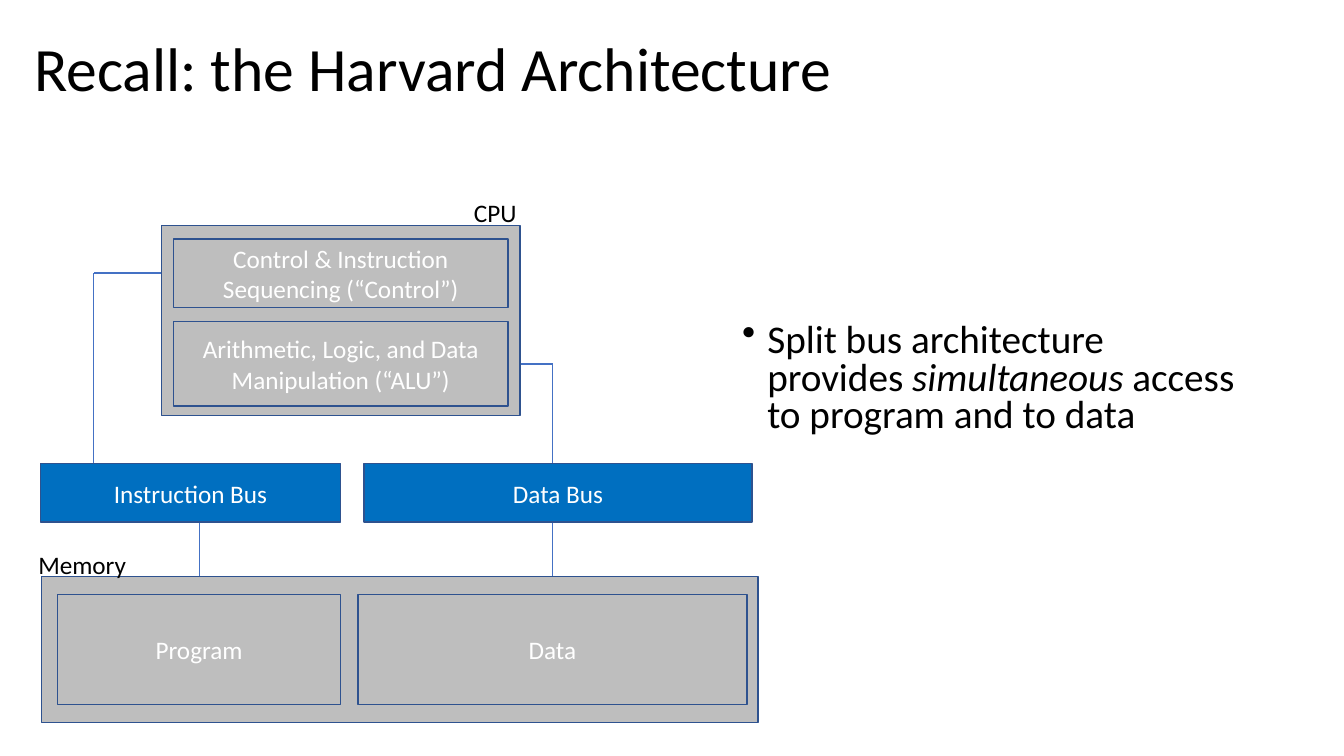
from itertools import pairwise

from lxml.etree import SubElement
from pptx import Presentation
from pptx.dml.color import RGBColor
from pptx.enum.shapes import MSO_CONNECTOR as Connector, MSO_SHAPE as Shape
from pptx.enum.text import MSO_ANCHOR as Anchor, PP_ALIGN as Align
from pptx.oxml.ns import qn
from pptx.util import Inches, Pt

COLORS = {
    "text": "000000",
    "light": "FFFFFF",
    "block": "BEBEBE",
    "bus": "006FC0",
    "outline": "2E528F",
    "wire": "4471C4",
}
SLIDE_WIDTH, SLIDE_HEIGHT = 13.33, 7.5
FONT = "Calibri"

# Diagram parts: left, top, width, height in percent of the diagram's box
BLOCKS = [
    ("", "block", (16.85, 5.74, 50, 35.95)),
    ("Control & Instruction\nSequencing (“Control”)", "block", (18.54, 8.22, 46.63, 13)),
    ("Arithmetic, Logic, and Data\nManipulation (“ALU”)", "block", (18.54, 23.9, 46.63, 16.06)),
    ("Instruction Bus", "bus", (0, 50.86, 41.85, 11.09)),
    ("Data Bus", "bus", (45.08, 50.86, 54.07, 11.09)),
    ("", "block", (0.14, 72.28, 99.86, 27.72)),
    ("Program", "block", (2.39, 75.72, 39.47, 20.84)),
    ("Data", "block", (44.24, 75.72, 54.21, 20.84)),
]
LABELS = [
    ("CPU", (60.39, 0, 6.32, 6.31)),
    ("Memory", (-0.28, 66.73, 12.64, 6.31)),
]
# Corner points of each wire, from the CPU through its bus to the memory
WIRES = [
    [(16.85, 14.72), (7.44, 14.72), (7.44, 57.93), (22.19, 57.93), (22.19, 72.28)],
    [(66.85, 31.93), (71.35, 31.93), (71.35, 72.28)],
]


def color(name):
    return RGBColor.from_string(COLORS[name])


def style(paragraph, size, color_name="text"):
    paragraph.font.name = FONT
    paragraph.font.size = Pt(size)
    paragraph.font.color.rgb = color(color_name)


def clear_margins(frame, top=0):
    frame.margin_left = frame.margin_right = frame.margin_bottom = 0
    frame.margin_top = Inches(top)
    frame.word_wrap = True


def add_text_box(slide, box, top_margin):
    frame = slide.shapes.add_textbox(*map(Inches, box)).text_frame
    clear_margins(frame, top_margin)
    return frame


def add_title(slide, box):
    paragraph = add_text_box(slide, box, 0.1).paragraphs[0]
    paragraph.text = "Recall: the Harvard Architecture"
    style(paragraph, 44)
    paragraph.line_spacing = Pt(47.5)
    paragraph.space_before = Pt(7)
    paragraph._p.get_or_add_pPr().set("marL", str(Inches(0.08)))


def add_block(slide, text, fill, box):
    block = slide.shapes.add_shape(Shape.RECTANGLE, *map(Inches, box))
    block.shadow.inherit = False
    block.fill.solid()
    block.fill.fore_color.rgb = color(fill)
    block.line.color.rgb = color("outline")
    block.line.width = Pt(1)
    if text:
        frame = block.text_frame
        clear_margins(frame)
        frame.vertical_anchor = Anchor.MIDDLE
        frame.text = text
        for paragraph in frame.paragraphs:
            paragraph.alignment = Align.CENTER
            style(paragraph, 18, "light")


def add_wire(slide, start, end):
    wire = slide.shapes.add_connector(
        Connector.STRAIGHT, *map(Inches, start), *map(Inches, end))
    wire.line.color.rgb = color("wire")
    wire.line.width = Pt(1)
    SubElement(wire._element.spPr, qn("a:effectLst"))


def add_diagram(slide, box):
    left, top, width, height = box

    def point(x, y):
        return left + width * x / 100, top + height * y / 100

    def area(x, y, w, h):
        return *point(x, y), width * w / 100, height * h / 100

    # Wires lie behind the blocks
    for corners in WIRES:
        for start, end in pairwise(corners):
            add_wire(slide, point(*start), point(*end))
    for text, fill, share in BLOCKS:
        add_block(slide, text, fill, area(*share))
    for text, share in LABELS:
        frame = add_text_box(slide, area(*share), 0.02)
        frame.word_wrap = False
        frame.text = text
        style(frame.paragraphs[0], 18)


def add_note(slide, box):
    paragraph = add_text_box(slide, box, 0.11).paragraphs[0]
    paragraph.add_run().text = "Split bus architecture provides "
    emphasis = paragraph.add_run()
    emphasis.text = "simultaneous "
    emphasis.font.italic = True
    paragraph.add_run().text = "access to program and to data"
    style(paragraph, 28)
    paragraph.line_spacing = 0.8
    paragraph.space_before = Pt(7.7)
    # Hanging bullet
    properties = paragraph._p.get_or_add_pPr()
    properties.set("marL", str(Inches(0.26)))
    properties.set("indent", str(Inches(-0.25)))
    bullet = SubElement(properties, qn("a:buChar"), char="•")
    default_font = properties.find(qn("a:defRPr"))
    if default_font is not None:
        default_font.addprevious(bullet)


def main():
    presentation = Presentation()
    presentation.slide_width = Inches(SLIDE_WIDTH)
    presentation.slide_height = Inches(SLIDE_HEIGHT)
    slide = presentation.slides.add_slide(presentation.slide_layouts[6])
    add_title(slide, (0.26, 0.27, 12.59, 0.77))
    add_diagram(slide, (0.4, 1.94, 7.12, 5.23))
    add_note(slide, (7.35, 3.1, 4.92, 1.24))
    presentation.save("out.pptx")


if __name__ == "__main__":
    main()
